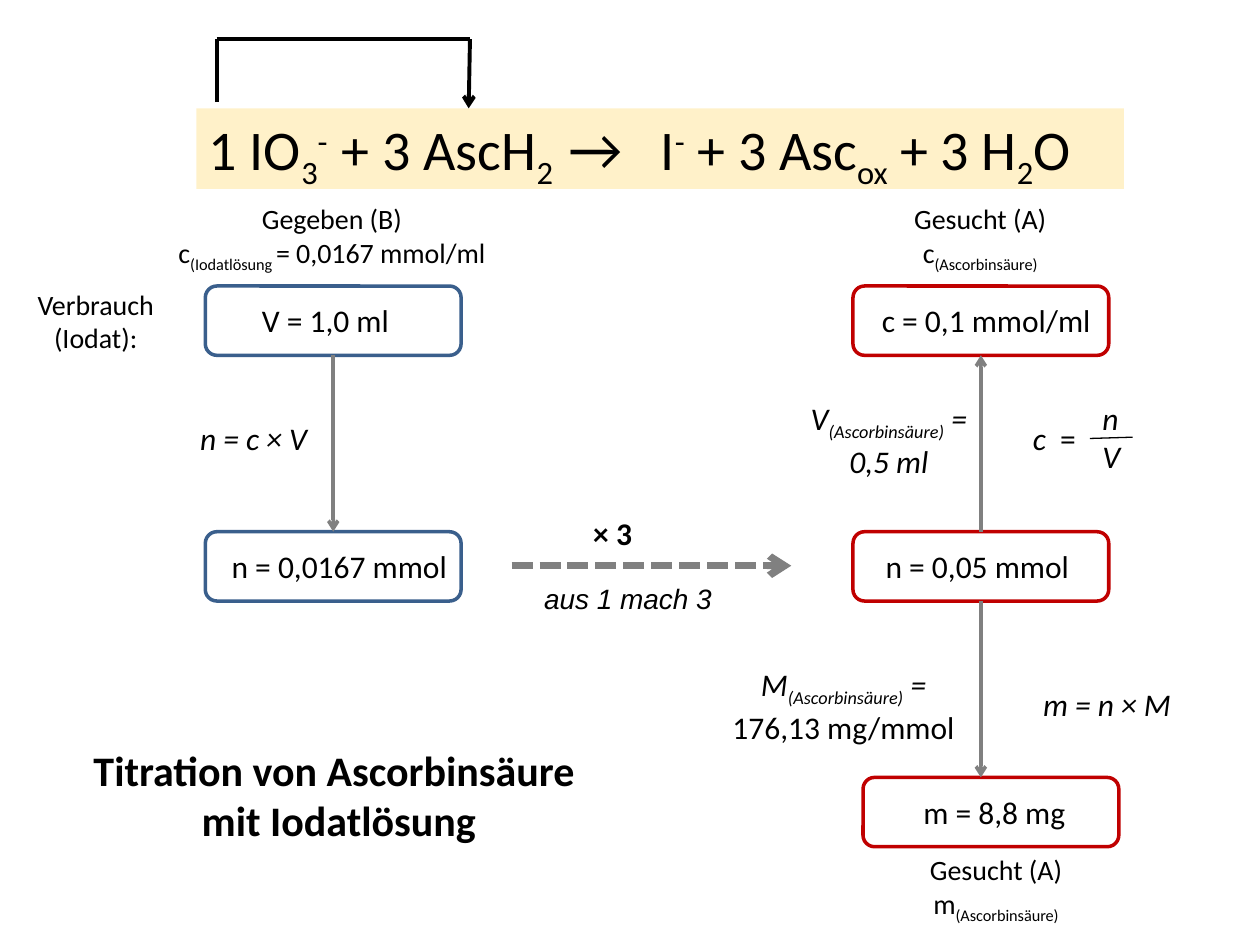
"""Build the slide on the titration of ascorbic acid with iodate."""
from lxml import etree
from pptx import Presentation
from pptx.dml.color import RGBColor
from pptx.enum.dml import MSO_LINE as Dash
from pptx.enum.shapes import MSO_CONNECTOR as Link, MSO_SHAPE as Form
from pptx.enum.text import MSO_ANCHOR as Anchor, MSO_AUTO_SIZE as Fit, PP_ALIGN as Align
from pptx.oxml.ns import qn
from pptx.util import Inches, Pt

hue = RGBColor.from_string
deck = Presentation()
deck.slide_width, deck.slide_height = Inches(10), Inches(7.5)
col, row = deck.slide_width / 100, deck.slide_height / 75
slide = deck.slides.add_slide(deck.slide_layouts[6])
shapes = slide.shapes


def write(shape, lines, size, style="", align=Align.LEFT):
    """Fill a shape; parts split by | may start with _ sub, ^ super, . upright, ~ gap."""
    frame = shape.text_frame
    frame.word_wrap = False
    frame.auto_size = Fit.SHAPE_TO_FIT_TEXT
    for k, line in enumerate(lines):
        para = frame.add_paragraph() if k else frame.paragraphs[0]
        para.alignment = align
        for part in line.split("|"):
            mark = part[0] if part[0] in "_^.~" else ""
            run = para.add_run()
            run.text = " " if mark == "~" else part[len(mark):]
            font = run.font
            font.size = Pt(size)
            font.name = "Lato" if part == "→" else "Arial" if style == "arial" else "Calibri"
            font.color.rgb = hue("000000")
            font.bold = style == "bold"
            font.italic = style in ("italic", "arial") and mark != "."
            props = run.font._element
            if mark == "~":
                props.set("spc", part[1:] + "00")
            elif mark in ("_", "^"):
                props.set("baseline", "-25000" if mark == "_" else "30000")


def draw(x1, y1, x2, y2, color, width, head=True, dash=None):
    """Draw a straight line, with an arrowhead at its end if asked."""
    line = shapes.add_connector(Link.STRAIGHT, *map(int, (x1 * col, y1 * row, x2 * col, y2 * row)))
    line.line.color.rgb = hue(color)
    line.line.width = Pt(width)
    if dash:
        line.line.dash_style = dash
    if head:
        etree.SubElement(line.line._ln, qn("a:tailEnd"), type="arrow")
    etree.SubElement(line._element.spPr, qn("a:effectLst"))
    return line


left, right, low = 16.3, 67.7, 68.5
tops = [22.7, 42.2, 61.7]
wide, high = 20.3, 5.5
blue, red, gray, black = "3A5F8C", "C00000", "808080", "000000"

cells = [
    ("V", left, tops[0], blue, "V = 1,0 ml", 19.8, 12.2),
    ("nB", left, tops[1], blue, "n = 0,0167 mmol", 17.4, 19.3),
    ("nA", right, tops[1], red, "n = 0,05 mmol", 69.3, 16.8),
    ("c", right, tops[0], red, "c = 0,1 mmol/ml", 69, 18.8),
    ("m", low, tops[2], red, "m = 8,8 mg", 72.3, 13.4),
]
boxes = {}
for key, x, y, color, text, start, span in cells:
    label = shapes.add_textbox(*map(int, (start * col, (y + 0.7) * row, span * col, 4 * row)))
    write(label, [text], 18)
    label.text_frame.vertical_anchor = Anchor.MIDDLE
    box = shapes.add_shape(Form.ROUNDED_RECTANGLE, *map(int, (x * col, y * row, wide * col, high * row)))
    box.shadow.inherit = False
    box.fill.background()
    box.line.color.rgb = hue(color)
    box.line.width = Pt(2)
    boxes[key] = box

for x, start, end in [(left, "V", "nB"), (right, "nA", "c"), (right, "nA", "m")]:
    mid = x + wide / 2
    down = end != "c"
    y1 = boxes[start].top / row + (high if down else 0)
    y2 = boxes[end].top / row + (0 if down else high)
    arrow = draw(mid, y1, mid, y2, gray, 2)
    arrow.begin_connect(boxes[start], 2 if down else 0)
    if end != "m":
        arrow.end_connect(boxes[end], 0 if down else 2)

draw(40.6, 44.9, 62.8, 44.9, gray, 4, dash=Dash.SQUARE_DOT)
draw(86.5, 34.8, 89.9, 34.7, black, 0.75, head=False)
draw(17.2, 8.1, 17.2, 3.1, black, 2.25, head=False)
draw(17.2, 3.1, 37.3, 3.1, black, 2.25, head=False)
draw(37.3, 3.1, 37.2, 8.6, black, 2.25)

mid = Align.CENTER
notes = [
    (42.2, 45.7, 15.5, 3.7, ["aus 1 mach 3"], 16, "arial", Align.LEFT),
    (12.5, 15.5, 27.7, 6.4, ["Gegeben (B)", "c|_(Iodatlösung |= 0,0167 mmol/ml"], 16, "", mid),
    (14.9, 32.8, 10.7, 4, ["n = c × V"], 18, "italic", Align.LEFT),
    (62.6, 31.2, 15.9, 7.1, ["V|_(Ascorbinsäure)| =", "0,5 ml"], 18, "italic", mid),
    (81, 32.8, 6.7, 4, ["c|~4|.="], 18, "italic", Align.LEFT),
    (86.5, 31.2, 3.5, 7.1, ["n", "V"], 18, "italic", Align.LEFT),
    (46.1, 40.3, 5.1, 4, ["× 3"], 18, "bold", Align.LEFT),
    (1.9, 22.3, 11.4, 6.4, ["Verbrauch", "(Iodat):"], 16, "", mid),
    (57, 52.3, 19.9, 7.1, ["M|_(Ascorbinsäure)| =", ".176,13 mg/mmol"], 18, "italic", mid),
    (81.8, 53.9, 12.3, 4, ["m = n × M"], 18, "italic", Align.LEFT),
    (71.5, 15.5, 12.6, 6.4, ["Gesucht (A)", "c|_(Ascorbinsäure)"], 16, "", mid),
    (72.4, 67.2, 13.3, 6.4, ["Gesucht (A)", "m|_(Ascorbinsäure)"], 16, "", mid),
    (6.2, 58.6, 41.4, 9.1, ["Titration von Ascorbinsäure ", "mit Iodatlösung"], 24, "bold", mid),
]
for x, y, w, h, lines, size, style, align in notes:
    note = shapes.add_textbox(*map(int, (x * col, y * row, w * col, h * row)))
    write(note, lines, size, style, align)

band = shapes.add_shape(Form.RECTANGLE, *map(int, (15.6 * col, 8.6 * row, 73.6 * col, 6.4 * row)))
band.shadow.inherit = False
band.line.fill.background()
band.fill.solid()
band.fill.fore_color.rgb = hue("FFC000")
tint = band._element.spPr.find(qn("a:solidFill"))[0]
etree.SubElement(tint, qn("a:alpha"), val="21000")
write(band, ["1 IO|_3|^-|~1|+ 3 AscH|_2|~1|→|~14|I|^-| + 3 Asc|_ox| + 3 H|_2|O"], 32)
band.text_frame.word_wrap = True
band.text_frame.vertical_anchor = Anchor.TOP

deck.save("out.pptx")
